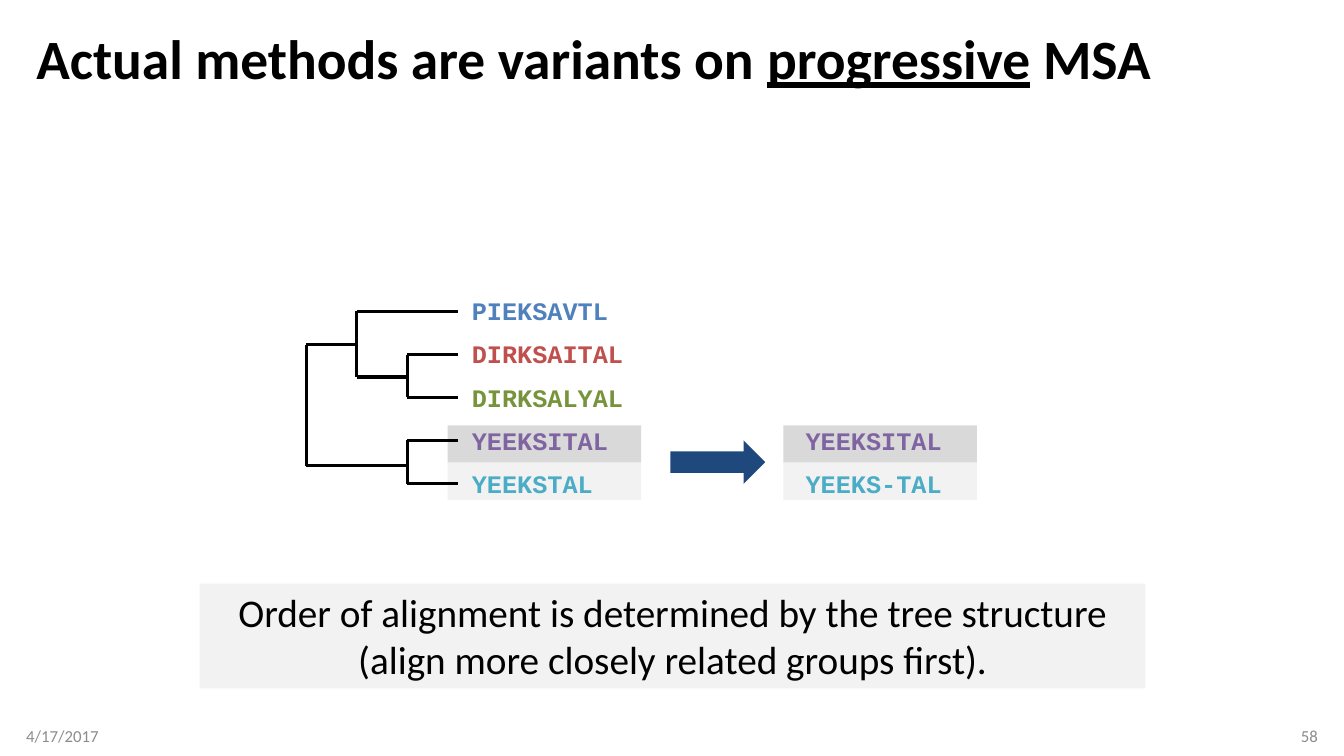
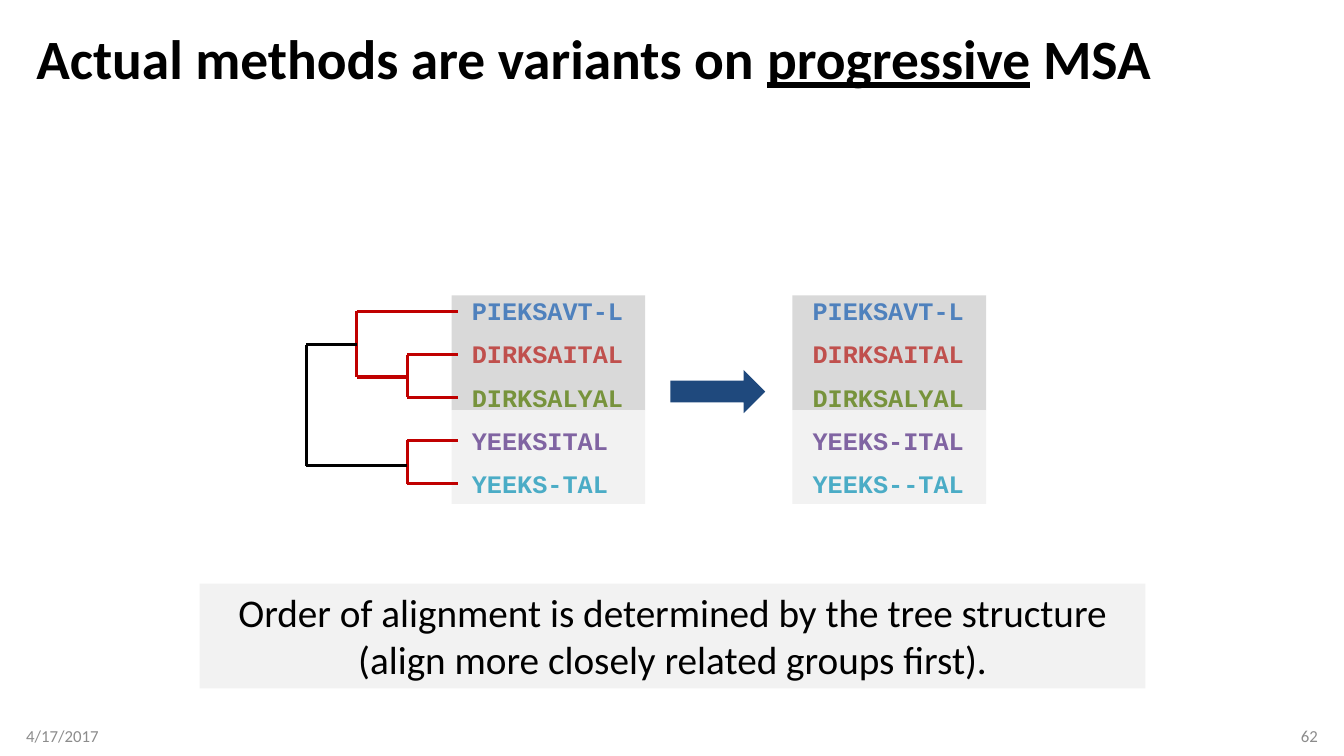
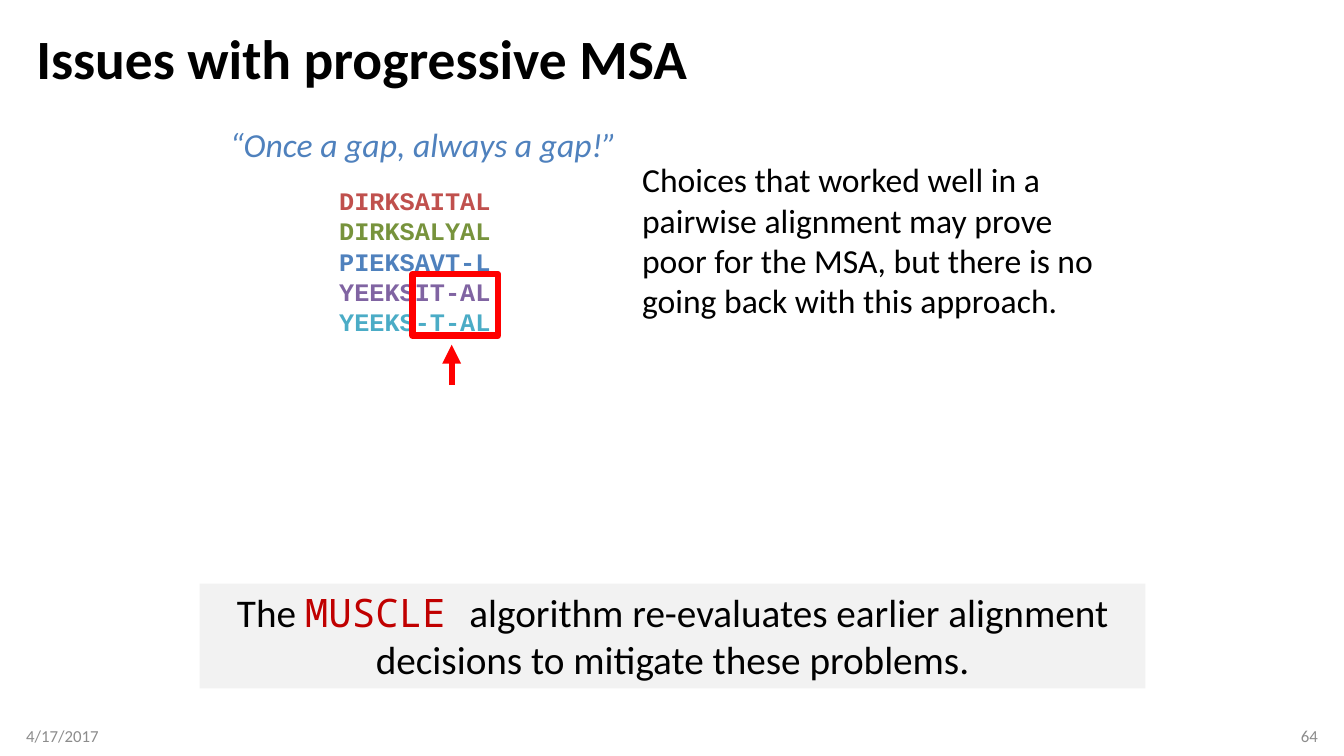
from pptx import Presentation
from pptx.dml.color import RGBColor
from pptx.enum.shapes import MSO_CONNECTOR, MSO_SHAPE
from pptx.enum.text import MSO_ANCHOR, MSO_AUTO_SIZE, PP_ALIGN
from pptx.oxml.ns import qn
from pptx.util import Inches, Pt
from lxml import etree

LEFT, MID, RIGHT = PP_ALIGN.LEFT, PP_ALIGN.CENTER, PP_ALIGN.RIGHT
TOP, CENTER = MSO_ANCHOR.TOP, MSO_ANCHOR.MIDDLE
RECT, ARROW = MSO_SHAPE.RECTANGLE, MSO_SHAPE.RIGHT_ARROW
LINE, FIXED = MSO_CONNECTOR.STRAIGHT, MSO_AUTO_SIZE.NONE

BLACK, GRAY, NAVY = "000000", "8C8C8C", "1F497D"
DARK, LIGHT = "D9D9D9", "F2F2F2"
CRIMSON, RED = "C00000", "FF0000"
BLUE, BRICK, GREEN = "4F81BD", "C0504D", "77933C"
VIOLET, AQUA = "8064A2", "4BACC6"
HUES = [BLUE, BRICK, GREEN, VIOLET, AQUA]
SANS, MONO, CODE = "Calibri", "Courier New", "Noto Sans Mono"

DATE = "4/17/2017"
VARIANT = [("Actual methods are variants on ", {}),
           ("progressive", {"line": True}), (" MSA", {})]
ORDER = ["Order of alignment is determined by the tree structure",
         "(align more closely related groups first)."]
MUSCLE = [[("The ", {}), ("MUSCLE ", {"face": CODE, "color": CRIMSON}),
           ("algorithm re-evaluates earlier alignment decisions "
            "to mitigate these problems.", {})]]
CHOICE = ("Choices that worked well in a pairwise alignment may prove poor "
          "for the MSA, but there is no going back with this approach.")
GAPPED = [("DIRKSAITAL", BRICK), ("DIRKSALYAL", GREEN), ("PIEKSAVT-L", BLUE),
          ("YEEKSIT-AL", VIOLET), ("YEEKS-T-AL", AQUA)]

ROW, STEP, CHAR, BAND = 2.93, 0.43, 0.15, 1.92
FORKS = [(4.04, 3.52, 3.94, 4.54, 4.54), (4.04, 4.37, 4.8, 4.54, 4.54),
         (3.54, 3.09, 3.74, 4.54, 4.04)]
ROOT = (3.04, 3.42, 4.62, 3.54, 4.04)

PAIR = [(4.22, 0.37, DARK), (4.59, 0.37, LIGHT)]
GROUP = [(2.93, 1.14, DARK), (4.07, 0.93, LIGHT)]
STEPS = [
    {"page": "58", "fork": BLACK, "arrow": 4.37, "bands": PAIR,
     "before": ["PIEKSAVTL", "DIRKSAITAL", "DIRKSALYAL",
                "YEEKSITAL", "YEEKSTAL"],
     "after": ["YEEKSITAL", "YEEKS-TAL"],
     "left": (4.44, 4.68), "right": (7.77, 7.99)},
    {"page": "62", "fork": CRIMSON, "arrow": 3.67, "bands": GROUP,
     "before": ["PIEKSAVT-L", "DIRKSAITAL", "DIRKSALYAL",
                "YEEKSITAL", "YEEKS-TAL"],
     "after": ["PIEKSAVT-L", "DIRKSAITAL", "DIRKSALYAL",
               "YEEKS-ITAL", "YEEKS--TAL"],
     "left": (4.48, 4.68), "right": (7.86, 8.06)},
]


def rgb(color):
    return RGBColor.from_string(color)


def style(font, size, color, face=SANS, bold=False, slant=False):
    font.size, font.name = Pt(size), face
    font.bold, font.italic = bold, slant
    font.color.rgb = rgb(color)


def fill(frame, paras, size, color=BLACK, align=LEFT, **look):
    for i, runs in enumerate(paras):
        para = frame.paragraphs[0] if i == 0 else frame.add_paragraph()
        para.alignment = align
        if isinstance(runs, str):
            runs = [(runs, {})]
        for words, diff in runs:
            run = para.add_run()
            run.text = words
            if "line" in diff:
                run.font.underline = True
            if "face" in diff:
                run.font.name = diff["face"]
            if "color" in diff:
                run.font.color.rgb = rgb(diff["color"])
        style(para.font, size, color, **look)


def pad(frame, sides):
    (frame.margin_left, frame.margin_top,
     frame.margin_right, frame.margin_bottom) = map(Inches, sides)


def text(slide, at, paras, size, color=BLACK, align=LEFT, anchor=TOP,
         inset=(0.1, 0.05, 0.1, 0.05), wrap=True, **look):
    box = slide.shapes.add_textbox(*map(Inches, at))
    frame = box.text_frame
    frame.word_wrap, frame.vertical_anchor = wrap, anchor
    pad(frame, inset)
    fill(frame, paras, size, color, align, **look)
    return box


def block(slide, kind, at, color=None, edge=None):
    shape = slide.shapes.add_shape(kind, *map(Inches, at))
    shape.shadow.inherit = False
    if color:
        shape.fill.solid()
        shape.fill.fore_color.rgb = rgb(color)
    else:
        shape.fill.background()
    if edge:
        shape.line.color.rgb, shape.line.width = rgb(edge), Pt(4.5)
    else:
        shape.line.fill.background()


def line(slide, ends, color, width=2.25, tip=False):
    wire = slide.shapes.add_connector(LINE, *map(Inches, ends))
    wire.line.color.rgb, wire.line.width = rgb(color), Pt(width)
    props = wire.element.spPr
    if tip:
        edge = props.find(qn("a:ln"))
        etree.SubElement(edge, qn("a:tailEnd"), type="triangle")
    etree.SubElement(props, qn("a:effectLst"))


def fork(slide, spec, color):
    x, top, low, upper, lower = spec
    line(slide, (x, top, upper, top), color)
    line(slide, (x, low, lower, low), color)
    line(slide, (x, top, x, low), color)


def base(deck, title, page, note):
    slide = deck.slides.add_slide(deck.slide_layouts[5])
    head = slide.shapes.title
    head.left, head.top, head.width, head.height = map(
        Inches, (0.26, 0.25, 12.81, 0.72))
    frame = head.text_frame
    frame.auto_size, frame.vertical_anchor = FIXED, CENTER
    fill(frame, [title], 39.6, bold=True)
    frame.paragraphs[0].line_spacing = 0.9
    for x, words, align, inset in [
            (0.26, DATE, LEFT, (0, 0.05, 0.1, 0.05)),
            (10.07, page, RIGHT, (0.1, 0.05, 0, 0.05))]:
        text(slide, (x, 7.1, 3, 0.4), [words], 12, GRAY, align, CENTER, inset)
    box = text(slide, (1.98, 5.79, 9.38, 1.04), note, 28, align=MID)
    box.fill.solid()
    box.fill.fore_color.rgb = rgb(LIGHT)
    return slide


def stack(slide, x, names):
    first = len(HUES) - len(names)
    for i, name in enumerate(names, first):
        text(slide, (x, ROW + i * STEP, len(name) * CHAR, 0.3), [name], 18,
             HUES[i], inset=(0, 0, 0, 0), wrap=False, face=MONO, bold=True)


def align(deck, step):
    slide = base(deck, VARIANT, step["page"], ORDER)
    for side, names in (("left", "before"), ("right", "after")):
        edge, start = step[side]
        for top, high, color in step["bands"]:
            block(slide, RECT, (edge, top, BAND, high), color)
        stack(slide, start, step[names])
    for spec in FORKS:
        fork(slide, spec, step["fork"])
    fork(slide, ROOT, BLACK)
    block(slide, ARROW, (6.65, step["arrow"], 0.94, 0.43), NAVY)


def issue(deck):
    slide = base(deck, [("Issues with progressive MSA", {})], "64", MUSCLE)
    text(slide, (6.27, 1.53, 4.75, 1.72), [CHOICE], 24)
    text(slide, (2.11, 1.18, 4.08, 0.5), ["“Once a gap, always a gap!”"], 24,
         BLUE, MID, inset=(0.1, 0.05, 0, 0.05), slant=True)
    rows = [[(name, {"color": hue})] for name, hue in GAPPED]
    text(slide, (3.36, 1.84, 1.51, 1.51), rows, 18, align=MID,
         inset=(0, 0, 0, 0), wrap=False, face=MONO, bold=True)
    block(slide, RECT, (4.09, 2.72, 0.85, 0.61), edge=RED)
    line(slide, (4.48, 3.82, 4.48, 3.42), RED, 4.5, tip=True)


def main():
    deck = Presentation()
    deck.slide_width, deck.slide_height = Inches(13.33), Inches(7.5)
    for step in STEPS:
        align(deck, step)
    issue(deck)
    deck.save("out.pptx")


if __name__ == "__main__":
    main()
